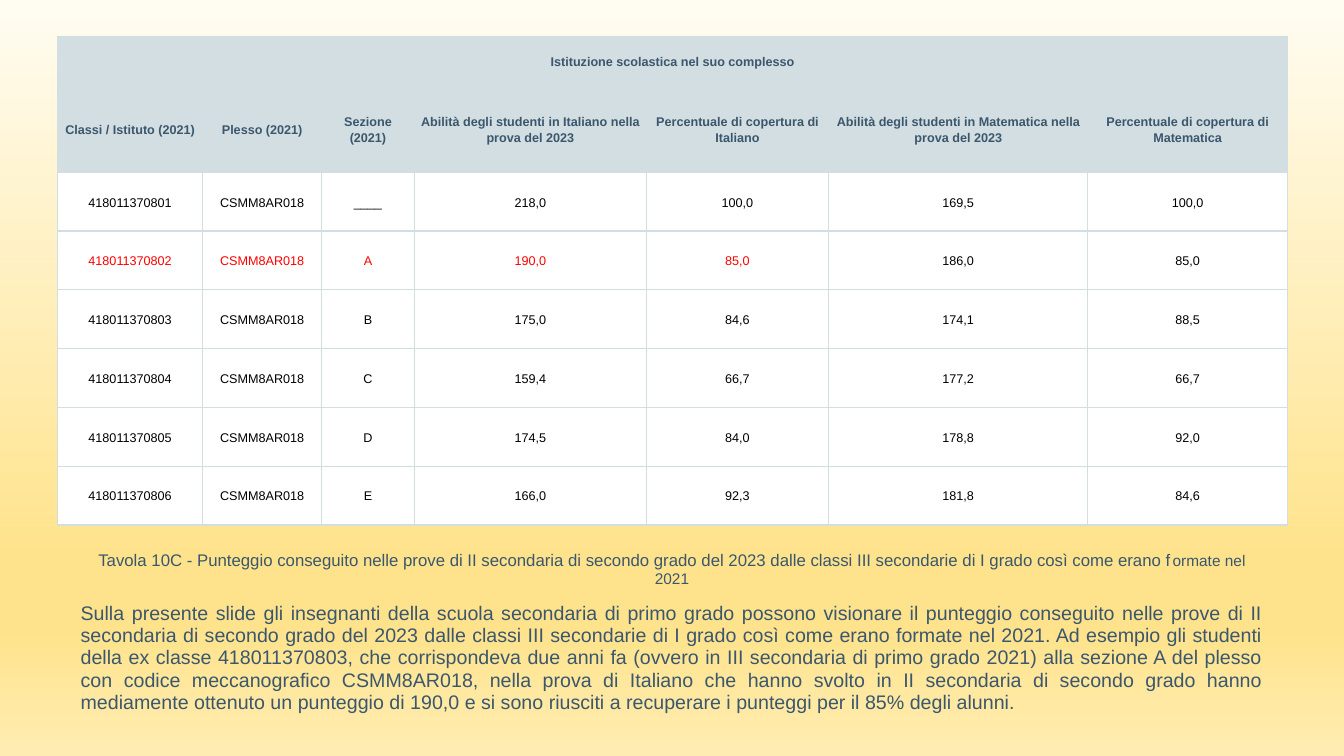
from copy import deepcopy
from dataclasses import dataclass

from pptx import Presentation
from pptx.dml.color import RGBColor as RGB
from pptx.enum.text import MSO_ANCHOR as Anchor, MSO_AUTO_SIZE as AutoSize, PP_ALIGN as Align
from pptx.oxml import parse_xml
from pptx.oxml.ns import nsdecls, qn
from pptx.util import Inches, Pt


@dataclass(frozen=True)
class Theme:
    font: str = "Arial"
    slate: str = "3B576D"
    grid: str = "D3DEE2"
    white: str = "FFFFFF"
    black: str = "000000"
    red: str = "FF0000"
    background: tuple = ((0, "FFFCF2"), (0.74, "FFE38C"), (0.83, "FFE38C"), (1, "FFECB2"))
    cell_size: float = 9
    caption_size: float = 12
    caption_end_size: float = 11
    body_size: float = 14
    border_width: float = 1


class ScoreSlide:
    def __init__(self, presentation, theme):
        self.theme = theme
        self.slide = presentation.slides.add_slide(presentation.slide_layouts[0])
        title = self.slide.shapes.title
        title.element.getparent().remove(title.element)

    def paint_background(self):
        fill = self.slide.background.fill
        fill.gradient()
        fill.gradient_angle = 270
        stop_list = next(self.slide.element.iter(qn("a:gsLst")))
        while len(stop_list) < len(self.theme.background):
            stop_list.append(deepcopy(stop_list[0]))
        for stop, (position, color) in zip(fill.gradient_stops, self.theme.background):
            stop.position = position
            stop.color.rgb = RGB.from_string(color)

    def add_run(self, paragraph, text, size, color, bold=False):
        run = paragraph.add_run()
        run.text = text
        font = run.font
        font.name, font.size, font.bold = self.theme.font, Pt(size), bold
        font.color.rgb = RGB.from_string(color)

    def set_borders(self, cell):
        properties = cell._tc.get_or_add_tcPr()
        for side in "LRTB":
            properties.append(parse_xml(
                f'<a:ln{side} {nsdecls("a")} w="{Pt(self.theme.border_width)}">'
                f'<a:solidFill><a:srgbClr val="{self.theme.grid}"/></a:solidFill></a:ln{side}>'
            ))

    def format_cell(self, cell, text, color, fill, margin, bold=False):
        self.set_borders(cell)
        cell.fill.solid()
        cell.fill.fore_color.rgb = RGB.from_string(fill)
        cell.vertical_anchor = Anchor.MIDDLE
        cell.margin_left = cell.margin_right = Inches(margin)
        cell.margin_top = cell.margin_bottom = Inches(margin)
        paragraph = cell.text_frame.paragraphs[0]
        paragraph.alignment = Align.CENTER
        paragraph.line_spacing = 1.15
        if text:
            self.add_run(paragraph, text, self.theme.cell_size, color, bold)

    def add_score_table(self, heading, labels, records, widths, heights, red_cells):
        theme = self.theme
        frame = self.slide.shapes.add_table(
            len(heights), len(widths), Inches(0.57), Inches(0.36),
            Inches(sum(widths)), Inches(sum(heights)))
        table = frame.table
        table.first_row = table.horz_banding = False
        for column, width in zip(table.columns, widths):
            column.width = Inches(width)
        for row, height in zip(table.rows, heights):
            row.height = Inches(height)
        heading_row = [heading] + [""] * (len(widths) - 1)
        for row_index, texts in enumerate([heading_row, labels, *records]):
            for column_index, text in enumerate(texts):
                cell = table.cell(row_index, column_index)
                if row_index < 2:
                    self.format_cell(cell, text, theme.slate, theme.grid, 0.03, bold=True)
                else:
                    color = theme.red if (row_index, column_index) in red_cells else theme.black
                    self.format_cell(cell, text, color, theme.white, 0.05)
        table.cell(0, 0).merge(table.cell(0, len(widths) - 1))

    def add_commentary(self, paragraphs):
        shape = self.slide.placeholders[1]
        shape.left, shape.top = Inches(0.7), Inches(5.42)
        shape.width, shape.height = Inches(11.93), Inches(1.71)
        frame = shape.text_frame
        frame.word_wrap = True
        frame.auto_size = AutoSize.NONE
        frame.vertical_anchor = Anchor.TOP
        for index, (alignment, runs) in enumerate(paragraphs):
            paragraph = frame.add_paragraph() if index else frame.paragraphs[0]
            paragraph.alignment = alignment
            paragraph.line_spacing = 0.95
            paragraph.space_before = Pt(10 if index else 0)
            for text, size in runs:
                self.add_run(paragraph, text, size, self.theme.slate)


LABELS = [
    "Classi / Istituto (2021)",
    "Plesso (2021)",
    "Sezione (2021)",
    "Abilità degli studenti in Italiano nella prova del 2023",
    "Percentuale di copertura di Italiano",
    "Abilità degli studenti in Matematica nella prova del 2023",
    "Percentuale di copertura di Matematica",
]
SCORES = [
    ("____", "218,0", "100,0", "169,5", "100,0"),
    ("A", "190,0", "85,0", "186,0", "85,0"),
    ("B", "175,0", "84,6", "174,1", "88,5"),
    ("C", "159,4", "66,7", "177,2", "66,7"),
    ("D", "174,5", "84,0", "178,8", "92,0"),
    ("E", "166,0", "92,3", "181,8", "84,6"),
]
CAPTION = (
    "Tavola 10C - Punteggio conseguito nelle prove di II secondaria di secondo grado del 2023 "
    "dalle classi III secondarie di I grado così come erano f"
)
COMMENT = (
    "Sulla presente slide gli insegnanti della scuola secondaria di primo grado possono visionare "
    "il punteggio conseguito nelle prove di II secondaria di secondo grado del 2023 dalle classi "
    "III secondarie di I grado così come erano formate nel 2021. Ad esempio gli studenti della ex "
    "classe 418011370803, che corrispondeva due anni fa (ovvero in III secondaria di primo grado "
    "2021) alla sezione A del plesso con codice meccanografico CSMM8AR018, nella prova di Italiano "
    "che hanno svolto in II secondaria di secondo grado hanno mediamente ottenuto un punteggio di "
    "190,0 e si sono riusciti a recuperare i punteggi per il 85% degli alunni."
)


def main():
    presentation = Presentation()
    presentation.slide_width, presentation.slide_height = Inches(13.33), Inches(7.5)
    theme = Theme()
    score_slide = ScoreSlide(presentation, theme)
    score_slide.paint_background()
    score_slide.add_commentary([
        (Align.CENTER, [(CAPTION, theme.caption_size), ("ormate nel 2021", theme.caption_end_size)]),
        (Align.JUSTIFY, [(COMMENT, theme.body_size)]),
    ])
    records = [
        (str(418011370801 + index), "CSMM8AR018", *scores)
        for index, scores in enumerate(SCORES)
    ]
    score_slide.add_score_table(
        "Istituzione scolastica nel suo complesso", LABELS, records,
        widths=[1.44, 1.18, 0.92, 2.3, 1.81, 2.57, 1.98],
        heights=[0.49, 0.86] + [3.5 / len(records)] * len(records),
        red_cells={(3, column) for column in range(5)},
    )
    presentation.save("out.pptx")


if __name__ == "__main__":
    main()
